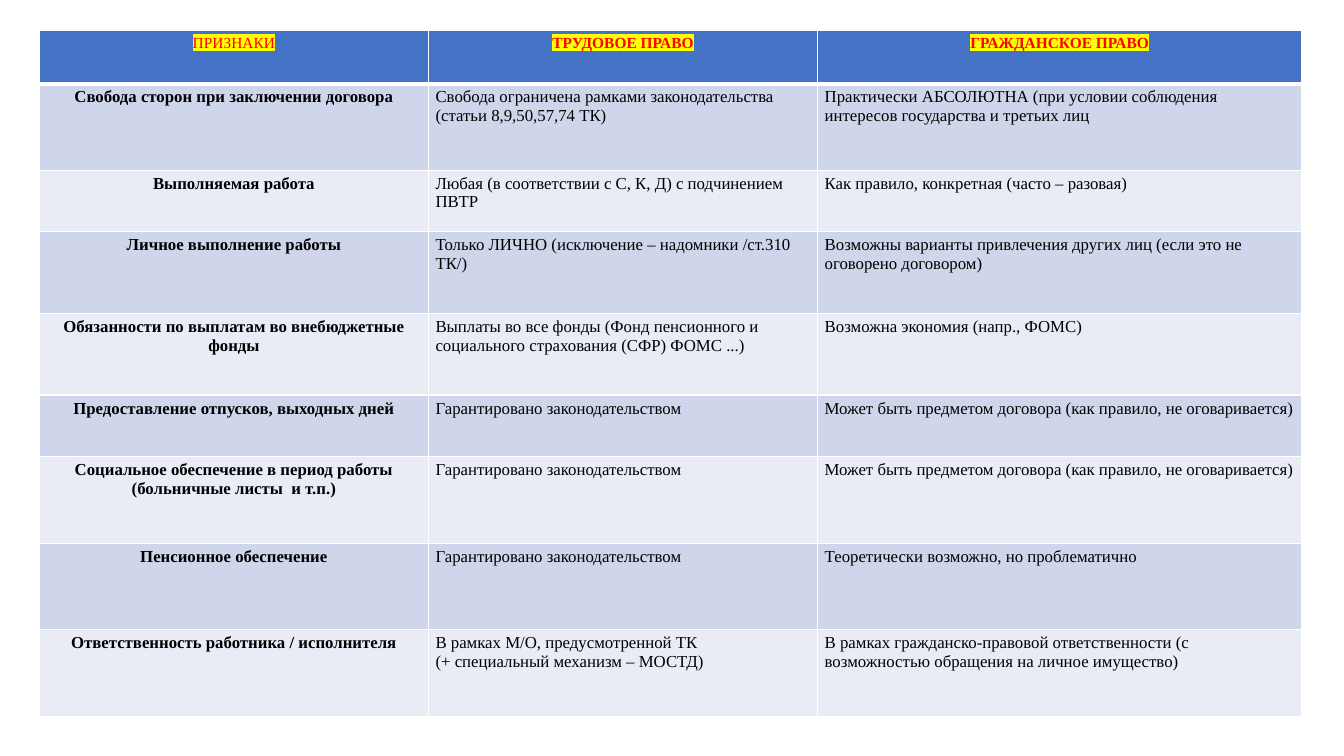
from lxml import etree
from pptx import Presentation
from pptx import util as u
from pptx.dml import color
from pptx.enum import text
from pptx.oxml import ns

PX = 9144
FONT = "Times New Roman"
COLORS = {
    "header": "4472C4",
    "odd_row": "CFD5EA",
    "even_row": "E9EBF5",
    "border": "FFFFFF",
    "header_text": "FF0000",
    "highlight": "FFFF00",
    "body_text": "000000",
}
COLUMN_WIDTHS = [386, 386, 480]
ROW_HEIGHTS = [53, 86, 61, 81, 81, 61, 86, 86, 86]
GUARANTEED = "Гарантировано законодательством"
NEGOTIABLE = "Может быть предметом договора (как правило, не оговаривается)"
COMPARISON = [
    ("ПРИЗНАКИ", "ТРУДОВОЕ ПРАВО", "ГРАЖДАНСКОЕ ПРАВО"),
    ("Свобода сторон при заключении договора",
     "Свобода ограничена рамками законодательства (статьи 8,9,50,57,74 ТК)",
     "Практически АБСОЛЮТНА (при условии соблюдения интересов государства и третьих лиц"),
    ("Выполняемая работа",
     "Любая (в соответствии с С, К, Д) с подчинением ПВТР",
     "Как правило, конкретная (часто – разовая)"),
    ("Личное выполнение работы",
     "Только ЛИЧНО (исключение – надомники /ст.310 ТК/)",
     "Возможны варианты привлечения других лиц (если это не оговорено договором)"),
    ("Обязанности по выплатам во внебюджетные фонды",
     "Выплаты во все фонды (Фонд пенсионного и социального страхования (СФР) ФОМС ...)",
     "Возможна экономия (напр., ФОМС)"),
    ("Предоставление отпусков, выходных дней", GUARANTEED, NEGOTIABLE),
    ("Социальное обеспечение в период работы (больничные листы  и т.п.)",
     GUARANTEED, NEGOTIABLE),
    ("Пенсионное обеспечение", GUARANTEED, "Теоретически возможно, но проблематично"),
    ("Ответственность работника / исполнителя",
     "В рамках М/О, предусмотренной ТК\n(+ специальный механизм – МОСТД)",
     "В рамках гражданско-правовой ответственности (с возможностью обращения на личное имущество)"),
]


def rgb(name):
    return color.RGBColor.from_string(COLORS[name])


def add_color(parent, name):
    etree.SubElement(parent, ns.qn("a:srgbClr"), val=COLORS[name])


def set_borders(cell, bottom_points):
    properties = cell._tc.get_or_add_tcPr()
    for side, points in (("L", 1), ("R", 1), ("T", 1), ("B", bottom_points)):
        line = etree.SubElement(properties, ns.qn(f"a:ln{side}"), w=str(u.Pt(points)))
        add_color(etree.SubElement(line, ns.qn("a:solidFill")), "border")


def add_run(paragraph, content, is_header, bold):
    run = paragraph.add_run()
    run.text = content
    run.font.name = FONT
    run.font.size = u.Pt(11 if is_header else 12)
    run.font.bold = bold
    run.font.color.rgb = rgb("header_text" if is_header else "body_text")
    if is_header:
        highlight = etree.Element(ns.qn("a:highlight"))
        add_color(highlight, "highlight")
        run._r.get_or_add_rPr().find(ns.qn("a:solidFill")).addnext(highlight)


def fill_cell(cell, content, row, column):
    is_header = row == 0
    set_borders(cell, 3 if is_header else 1)
    cell.fill.solid()
    cell.fill.fore_color.rgb = rgb(
        "header" if is_header else "odd_row" if row % 2 else "even_row")
    cell.margin_left = cell.margin_right = 7 * PX
    cell.margin_top = cell.margin_bottom = 4 * PX
    centered = is_header or column == 0
    bold = is_header != (column == 0)
    for index, line in enumerate(content.split("\n")):
        frame = cell.text_frame
        paragraph = frame.add_paragraph() if index else frame.paragraphs[0]
        paragraph.alignment = text.PP_ALIGN.CENTER if centered else text.PP_ALIGN.LEFT
        add_run(paragraph, line, is_header, bold)


def add_comparison_table(slide, left, top, width, height):
    table = slide.shapes.add_table(
        len(ROW_HEIGHTS), len(COLUMN_WIDTHS),
        left * PX, top * PX, width * PX, height * PX).table
    for column, size in zip(table.columns, COLUMN_WIDTHS):
        column.width = size * width * PX // sum(COLUMN_WIDTHS)
    for row, size in zip(table.rows, ROW_HEIGHTS):
        row.height = size * height * PX // sum(ROW_HEIGHTS)
    for row, contents in enumerate(COMPARISON):
        for column, content in enumerate(contents):
            fill_cell(table.cell(row, column), content, row, column)


def main():
    presentation = Presentation()
    presentation.slide_width = 1333 * PX
    presentation.slide_height = 750 * PX
    slide = presentation.slides.add_slide(presentation.slide_layouts[6])
    add_comparison_table(slide, 39, 30, sum(COLUMN_WIDTHS), sum(ROW_HEIGHTS))
    presentation.save("out.pptx")


if __name__ == "__main__":
    main()
